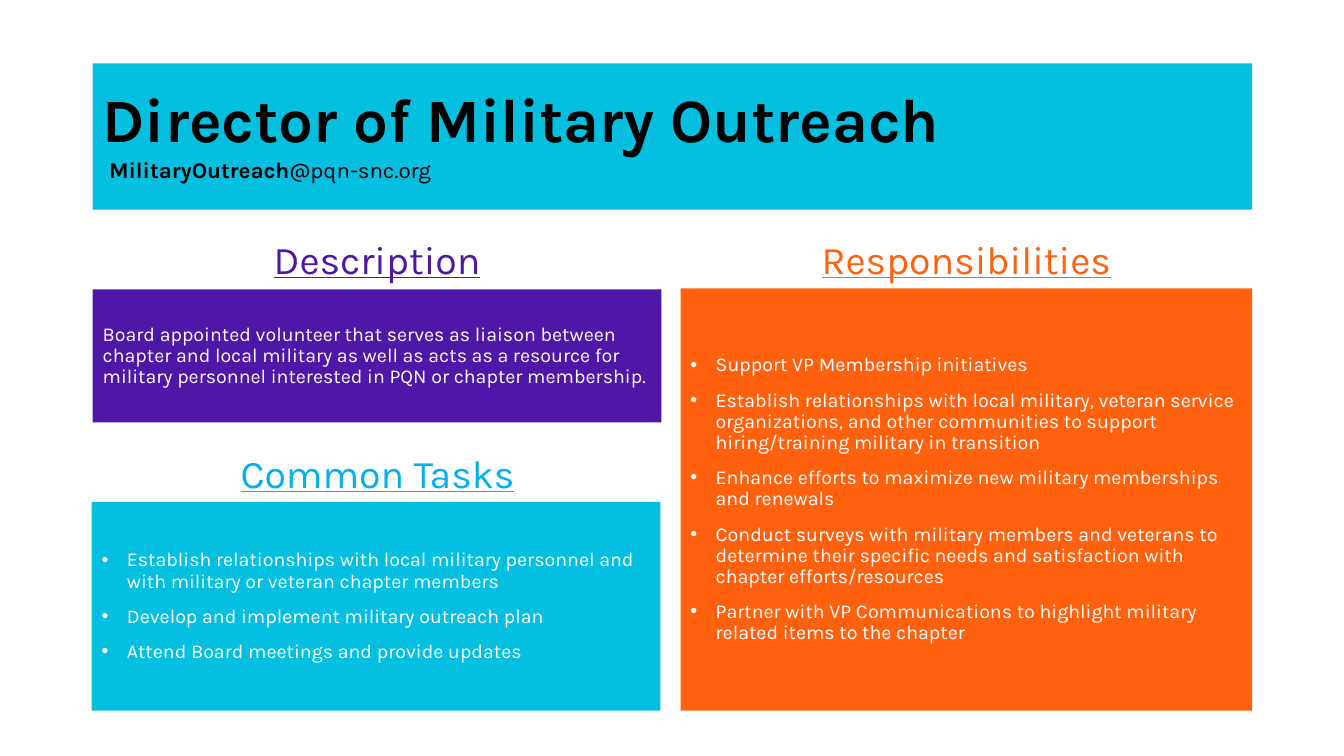
from dataclasses import dataclass

from lxml import etree
from pptx import Presentation
from pptx.dml.color import RGBColor
from pptx.enum.shapes import MSO_SHAPE
from pptx.enum.text import MSO_ANCHOR, PP_ALIGN
from pptx.oxml.ns import qn
from pptx.shapes.autoshape import Shape
from pptx.slide import Slide
from pptx.text.text import _Paragraph, _Run
from pptx.util import Inches, Pt

RECTANGLE = MSO_SHAPE.RECTANGLE
MIDDLE, BOTTOM = MSO_ANCHOR.MIDDLE, MSO_ANCHOR.BOTTOM
LEFT, CENTER = PP_ALIGN.LEFT, PP_ALIGN.CENTER


@dataclass(frozen=True)
class Theme:
    font: str = "Karla"
    black: str = "000000"
    white: str = "FFFFFF"
    cyan: str = "04BFE0"
    sky: str = "00B0F0"
    purple: str = "4E17A8"
    orange: str = "FF610F"
    title_size: int = 44
    spacer_size: int = 18
    email_size: int = 16
    heading_size: int = 28
    body_size: int = 14
    line_spacing: float = 0.9
    space_before: int = 10
    bullet_indent: float = 0.25


@dataclass(frozen=True)
class Box:
    left: float
    top: float
    width: float
    height: float


@dataclass(frozen=True)
class Section:
    heading: str
    heading_box: Box
    heading_color: str
    panel_box: Box
    panel_color: str
    lines: tuple[str, ...]
    bulleted: bool = True


THEME = Theme()
BANNER = Box(0.92, 0.63, 11.5, 1.45)

SECTIONS = (
    Section(
        "Responsibilities", Box(6.75, 1.96, 5.67, 0.9), THEME.orange,
        Box(6.75, 2.86, 5.67, 4.19), THEME.orange,
        (
            "Support VP Membership initiatives",
            "Establish relationships with local military, veteran service "
            "organizations, and other communities to support "
            "hiring/training military in transition",
            "Enhance efforts to maximize new military memberships and renewals",
            "Conduct surveys with military members and veterans to determine "
            "their specific needs and satisfaction with chapter efforts/resources",
            "Partner with VP Communications to highlight military related items "
            "to the chapter",
        ),
    ),
    Section(
        "Description", Box(0.92, 1.96, 5.64, 0.9), THEME.purple,
        Box(0.92, 2.87, 5.64, 1.32), THEME.purple,
        (
            "Board appointed volunteer that serves as liaison between chapter "
            "and local military as well as acts as a resource for military "
            "personnel interested in PQN or chapter membership.",
        ),
        bulleted=False,
    ),
    Section(
        "Common Tasks", Box(0.91, 4.3, 5.67, 0.68), THEME.sky,
        Box(0.91, 4.98, 5.64, 2.07), THEME.cyan,
        (
            "Establish relationships with local military personnel and with "
            "military or veteran chapter members",
            "Develop and implement military outreach plan",
            "Attend Board meetings and provide updates",
        ),
    ),
)


def inches(box: Box) -> tuple[Inches, Inches, Inches, Inches]:
    return Inches(box.left), Inches(box.top), Inches(box.width), Inches(box.height)


def style_run(run: _Run, size: int, color: str, bold: bool = False) -> None:
    run.font.name = THEME.font
    run.font.size = Pt(size)
    run.font.bold = bold
    run.font.color.rgb = RGBColor.from_string(color)


def style_paragraph(paragraph: _Paragraph, align: PP_ALIGN, before: int) -> None:
    paragraph.alignment = align
    paragraph.line_spacing = THEME.line_spacing
    paragraph.space_before = Pt(before)


def add_bullet(paragraph: _Paragraph) -> None:
    indent = Inches(THEME.bullet_indent)
    properties = paragraph._p.get_or_add_pPr()
    properties.set("marL", str(indent))
    properties.set("indent", str(-indent))
    etree.SubElement(properties, qn("a:buFont")).set("typeface", "Arial")
    etree.SubElement(properties, qn("a:buChar")).set("char", "•")


def add_panel(slide: Slide, box: Box, color: str) -> Shape:
    panel = slide.shapes.add_shape(RECTANGLE, *inches(box))
    panel.shadow.inherit = False
    panel.fill.solid()
    panel.fill.fore_color.rgb = RGBColor.from_string(color)
    panel.line.fill.background()
    panel.text_frame.word_wrap = True
    panel.text_frame.vertical_anchor = MIDDLE
    return panel


def add_banner(slide: Slide) -> None:
    title = add_panel(slide, BANNER, THEME.cyan).text_frame.paragraphs[0]
    title.text = "Director of Military Outreach\v"
    style_paragraph(title, LEFT, 0)
    style_run(title.runs[0], THEME.title_size, THEME.black, bold=True)
    # The e-mail line below the title mixes sizes and weights
    for text, size, bold in (
        (" ", THEME.spacer_size, True),
        ("MilitaryOutreach", THEME.email_size, True),
        ("@pqn-snc.org", THEME.email_size, False),
    ):
        run = title.add_run()
        run.text = text
        style_run(run, size, THEME.black, bold)


def add_section(slide: Slide, section: Section) -> None:
    # Underlined heading
    frame = slide.shapes.add_textbox(*inches(section.heading_box)).text_frame
    frame.word_wrap = True
    frame.vertical_anchor = BOTTOM
    frame.text = section.heading
    heading = frame.paragraphs[0]
    style_paragraph(heading, CENTER, THEME.space_before)
    style_run(heading.runs[0], THEME.heading_size, section.heading_color)
    heading.runs[0].font.underline = True

    # Coloured panel with its lines
    body = add_panel(slide, section.panel_box, section.panel_color).text_frame
    body.text = "\n".join(section.lines)
    for paragraph in body.paragraphs:
        style_paragraph(paragraph, LEFT, THEME.space_before)
        style_run(paragraph.runs[0], THEME.body_size, THEME.white)
        if section.bulleted:
            add_bullet(paragraph)


def main() -> None:
    presentation = Presentation()
    presentation.slide_width = Inches(13.33)
    presentation.slide_height = Inches(7.5)
    slide = presentation.slides.add_slide(presentation.slide_layouts[6])
    add_banner(slide)
    for section in SECTIONS:
        add_section(slide, section)
    presentation.save("out.pptx")


if __name__ == "__main__":
    main()
